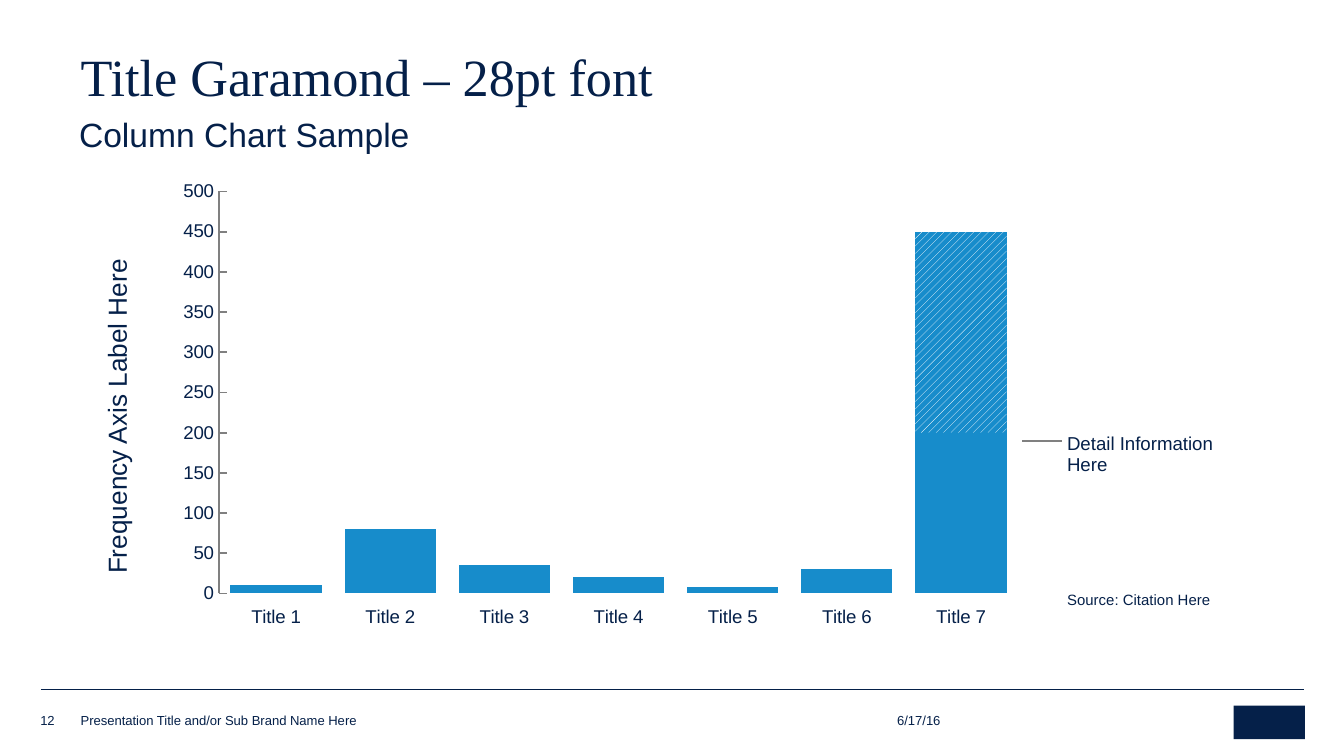
from lxml.etree import SubElement
from pptx import Presentation
from pptx.chart.data import CategoryChartData
from pptx.dml.color import RGBColor
from pptx.enum.chart import XL_CHART_TYPE, XL_TICK_MARK
from pptx.enum.dml import MSO_PATTERN
from pptx.enum.shapes import MSO_CONNECTOR, MSO_SHAPE
from pptx.enum.text import MSO_ANCHOR, MSO_AUTO_SIZE, PP_ALIGN
from pptx.oxml import parse_xml
from pptx.oxml.ns import nsdecls, qn
from pptx.util import Pt

PX = 4572
COLORS = {"navy": "052049", "blue": "178CCB", "gray": "808080", "white": "FFFFFF"}
SANS = "Arial"
SERIF = "Times New Roman"
PADDING = (20, 10, 20, 10)


def rgb(name):
    return RGBColor.from_string(COLORS[name])


def emu(*lengths):
    return [length * PX for length in lengths]


def style_font(font, size, face=SANS, color="navy"):
    font.size = Pt(size)
    font.name = face
    font.color.rgb = rgb(color)


def write(frame, text, size=10, face=SANS, align=PP_ALIGN.LEFT,
          anchor=MSO_ANCHOR.TOP, spacing=0.9, insets=(0, 0, 0, 0)):
    frame.word_wrap = True
    frame.auto_size = MSO_AUTO_SIZE.NONE
    frame.vertical_anchor = anchor
    (frame.margin_left, frame.margin_top,
     frame.margin_right, frame.margin_bottom) = emu(*insets)
    paragraph = frame.paragraphs[0]
    paragraph.text = text
    paragraph.alignment = align
    paragraph.line_spacing = spacing
    for run in paragraph.runs:
        style_font(run.font, size, face)


class ChartSlide:
    def __init__(self, deck):
        self.slide = deck.slides.add_slide(deck.slide_layouts[5])
        self.shapes = self.slide.shapes

    def title(self, text, box, **style):
        heading = self.shapes.title
        heading.left, heading.top, heading.width, heading.height = emu(*box)
        write(heading.text_frame, text, **style)

    def text(self, text, box, rotation=0, **style):
        label = self.shapes.add_textbox(*emu(*box))
        label.rotation = rotation
        write(label.text_frame, text, **style)

    def rule(self, left, right, y, color, weight):
        rule = self.shapes.add_connector(MSO_CONNECTOR.STRAIGHT, *emu(left, y, right, y))
        rule.line.color.rgb = rgb(color)
        rule.line.width = Pt(weight)
        SubElement(rule._element.spPr, qn("a:effectLst"))

    def block(self, box, color):
        block = self.shapes.add_shape(MSO_SHAPE.RECTANGLE, *emu(*box))
        block.shadow.inherit = False
        block.fill.solid()
        block.fill.fore_color.rgb = rgb(color)
        block.line.fill.background()

    def columns(self, box, categories, series, plot_box):
        data = CategoryChartData()
        data.categories = categories
        for name, values in series.items():
            data.add_series(name, values)
        chart = self.shapes.add_chart(XL_CHART_TYPE.COLUMN_STACKED, *emu(*box), data).chart
        chart.has_legend = False
        chart.has_title = False
        style_font(chart.font, 18, SERIF)

        plot = chart.plots[0]
        plot.gap_width = 25
        plot.overlap = 100
        plot.vary_by_categories = False
        for column in plot.series:
            column.format.fill.solid()
            column.format.fill.fore_color.rgb = rgb("blue")
        hatch = plot.series[1].points[len(categories) - 1].format.fill
        hatch.patterned()
        hatch.pattern = MSO_PATTERN.WIDE_UPWARD_DIAGONAL
        hatch.fore_color.rgb = rgb("white")
        hatch.back_color.rgb = rgb("blue")

        for axis, tick in ((chart.category_axis, XL_TICK_MARK.OUTSIDE),
                           (chart.value_axis, XL_TICK_MARK.INSIDE)):
            axis.has_major_gridlines = False
            axis.major_tick_mark = tick
            axis.minor_tick_mark = XL_TICK_MARK.NONE
            style_font(axis.tick_labels.font, 10)
        chart.category_axis.format.line.fill.background()
        frequency = chart.value_axis
        frequency.minimum_scale = 0
        frequency.maximum_scale = 500
        frequency.major_unit = 50
        frequency.format.line.color.rgb = rgb("gray")
        frequency.format.line.width = Pt(1)

        area = chart._chartSpace.chart.plotArea
        for layout in area.findall(qn("c:layout")):
            area.remove(layout)
        sizes = "".join(f'<c:{key} val="{length / whole}"/>'
                        for key, length, whole in zip("xywh", plot_box, box[2:] * 2))
        area.insert(0, parse_xml(
            f'<c:layout {nsdecls("c")}><c:manualLayout><c:layoutTarget val="inner"/>'
            f'<c:xMode val="edge"/><c:yMode val="edge"/>{sizes}'
            '</c:manualLayout></c:layout>'))


def main():
    deck = Presentation()
    deck.slide_width, deck.slide_height = emu(2000, 1125)
    page = ChartSlide(deck)

    page.rule(61, 1940, 1026, "navy", 0.25)
    page.block((1836, 1050, 106, 50), "navy")
    page.title("Title Garamond – 28pt font", (100, 70, 1768, 124), size=28, face=SERIF,
               spacing=0.85, insets=PADDING)
    page.text("Column Chart Sample", (98, 166, 1766, 62), size=18, insets=PADDING)

    for text, box in (("6/17/16", (1335, 1058, 202, 26)),
                      ("Presentation Title and/or Sub Brand Name Here", (120, 1062, 942, 22)),
                      ("12", (60, 1058, 54, 26))):
        page.text(text, box, size=7, anchor=MSO_ANCHOR.BOTTOM, spacing=1.0)

    page.columns((224, 268, 1438, 666),
                 [f"Title {number}" for number in range(1, 8)],
                 {"Series 1": (10, 80, 35, 20, 8, 30, 200),
                  "Series 2": (None,) * 6 + (250,)},
                 (102, 17, 1189, 601))
    page.text("Frequency Axis Label Here", (-96, 598, 546, 44), rotation=270,
              size=14, align=PP_ALIGN.CENTER)
    page.rule(1521, 1580, 656, "gray", 1)
    page.text("Source: Citation Here", (1588, 882, 332, 24), size=8)
    page.text("Detail Information\nHere", (1588, 647, 332, 60))

    deck.save("out.pptx")


if __name__ == "__main__":
    main()
